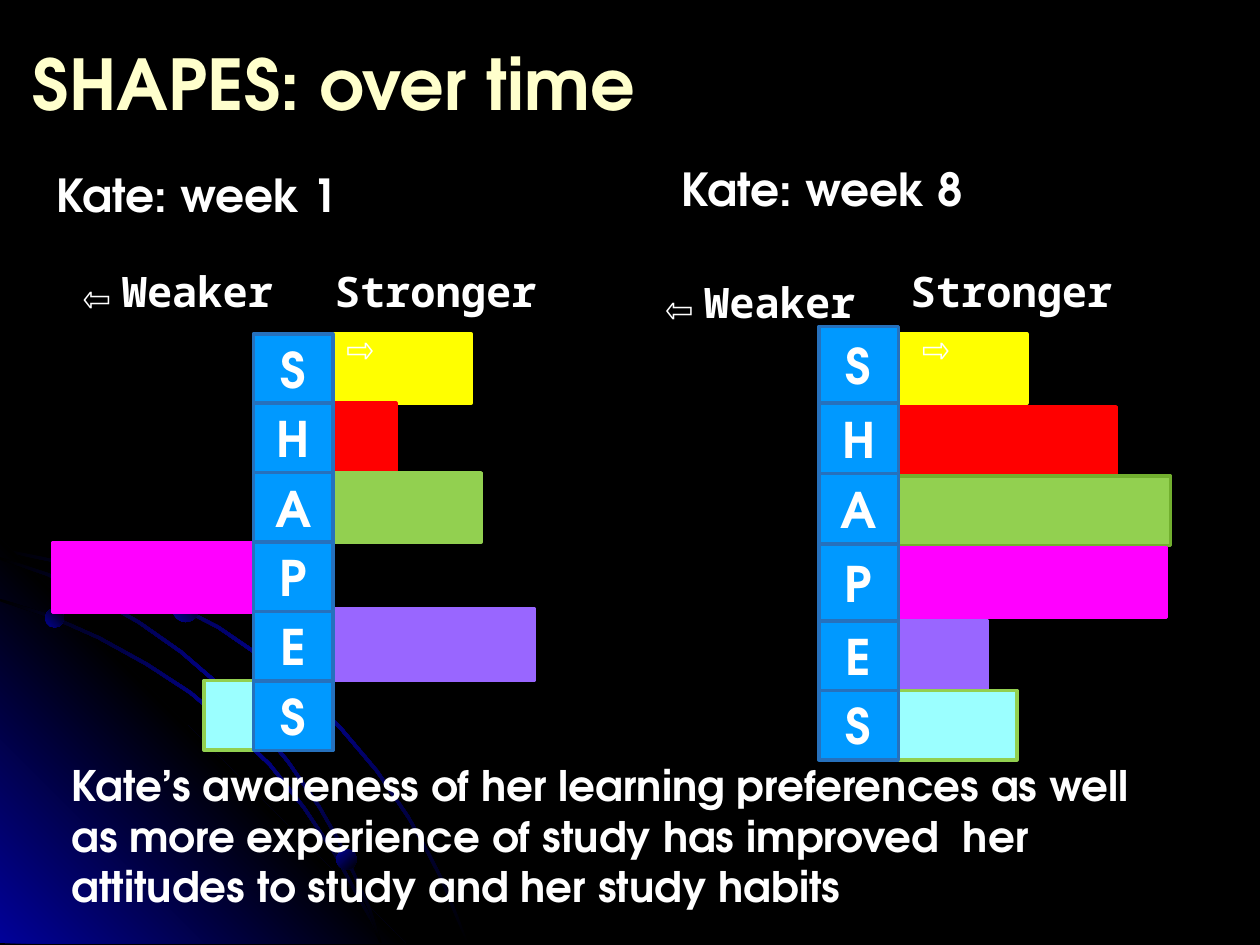
from lxml.etree import SubElement
from pptx import Presentation
from pptx.dml.color import RGBColor
from pptx.enum.shapes import MSO_SHAPE
from pptx.enum.text import MSO_ANCHOR, MSO_AUTO_SIZE, PP_ALIGN
from pptx.oxml.ns import qn
from pptx.util import Cm, Pt

HEADING_FONT, LABEL_FONT = "TeX Gyre Adventor", "Noto Sans Mono"
BLACK = RGBColor(0x00, 0x00, 0x00)
WHITE = RGBColor(0xFF, 0xFF, 0xFF)
CREAM = RGBColor(0xFF, 0xFF, 0xCC)
NAVY = RGBColor(0x01, 0x01, 0x99)
BLUE = RGBColor(0x00, 0x99, 0xFF)
BLUE_EDGE = RGBColor(0x26, 0x71, 0xBD)
YELLOW = RGBColor(0xFF, 0xFF, 0x00)
RED = RGBColor(0xFF, 0x00, 0x00)
GREEN = RGBColor(0x92, 0xD0, 0x50)
GREEN_EDGE = RGBColor(0x72, 0xAF, 0x2F)
MAGENTA = RGBColor(0xFF, 0x00, 0xFF)
PURPLE = RGBColor(0x99, 0x66, 0xFF)
AQUA = RGBColor(0x9B, 0xFF, 0xFF)

# Content; every length is in centimetres
TITLE = "SHAPES: over time"
LETTERS = "SHAPES"
LETTER_WIDTH = 1.6
BAR_FILLS = [YELLOW, RED, GREEN, MAGENTA, PURPLE, AQUA]

# Bars: top, length (negative is weaker, to the left), height
WEEKS = [
    {
        "column": 5.11, "top": 6.73, "heights": [1.4] * 6,
        "bars": [(6.73, 2.79, 1.4), (8.13, 1.27, 1.4), (9.53, 2.99, 1.4),
                 (10.95, -4.05, 1.4), (12.27, 4.06, 1.45), (13.72, -1, 1.4)],
        "edges": [YELLOW, RED, GREEN, MAGENTA, PURPLE, GREEN],
    },
    {
        "column": 16.51, "top": 6.58,
        "heights": [1.55, 1.42, 1.42, 1.55, 1.4, 1.4],
        "bars": [(6.73, 2.59, 1.4), (8.2, 4.39, 1.4), (9.6, 5.49, 1.4),
                 (11.05, 5.41, 1.4), (12.52, 1.8, 1.35), (13.92, 2.39, 1.4)],
        "edges": [YELLOW, RED, GREEN_EDGE, MAGENTA, PURPLE, GREEN],
    },
]

# Text, box, font name, size
TEXTS = [
    ("Kate: week 1", (0.89, 3.25, 8.61, 1.37), HEADING_FONT, 26),
    ("⇦Weaker", (1.19, 5.23, 5.51, 1.27), LABEL_FONT, 24),
    ("Stronger ⇨", (6.5, 5.23, 5.21, 1.27), LABEL_FONT, 24),
    ("Kate: week 8", (13.49, 3.12, 8.61, 1.37), HEADING_FONT, 26),
    ("⇦Weaker", (12.93, 5.44, 4.57, 1.27), LABEL_FONT, 24),
    ("Stronger ⇨", (18.11, 5.23, 5.59, 1.27), LABEL_FONT, 24),
    ("Kate’s awareness of her learning preferences as well as more experience "
     "of study has improved  her attitudes to study and her study habits",
     (1.19, 15.19, 22.91, 3.33), HEADING_FONT, 24),
]

# Background: upper edges of the thin arcs, the corner glow and the dots
SLIDE_FOOT = 19.02
OUTER_ARC = [(0, 11.05), (0.71, 11.2), (1.45, 11.35), (2.49, 11.66), (3.45, 12.12),
             (4.42, 12.62), (5.31, 13.23), (6.15, 13.92), (6.91, 14.68), (7.62, 15.52),
             (8.26, 16.46), (8.61, 17.09), (8.94, 17.73), (9.19, 18.36), (9.45, 19.02)]
INNER_ARC = [(0, 12.07), (1.04, 12.4), (2.01, 12.83), (2.97, 13.36), (3.86, 13.94),
             (4.67, 14.63), (5.46, 15.39), (6.15, 16.26), (6.76, 17.17), (7.26, 18.08),
             (7.52, 18.54), (7.7, 19.02)]
MIDDLE_ARC = [(0, 11.23), (0.99, 11.56), (1.93, 12.01), (2.82, 12.52), (3.66, 13.11),
              (4.45, 13.79), (5.18, 14.55), (5.82, 15.32), (6.45, 16.23), (6.83, 16.89),
              (7.16, 17.6), (7.47, 18.29), (7.7, 19.02)]
CORNER = [(8.18, SLIDE_FOOT), (0, SLIDE_FOOT), (0, 10.85)]
DOTS = [(0.91, 12.27, 0.38, 315), (6.78, 17.12, 0.41, 45), (3.48, 12.01, 0.53, 315)]


def paint_gradient(shape, colors, angle):
    """Spread the colours evenly; the angle runs clockwise."""
    shape.shadow.inherit = False
    shape.line.fill.background()
    shape.fill.gradient()
    shape.fill.gradient_angle = 360 - angle
    stops = shape._element.spPr.find(".//" + qn("a:gsLst"))
    for stop in list(stops):
        stops.remove(stop)
    for index, color in enumerate(colors):
        position = str(100000 * index // (len(colors) - 1))
        stop = SubElement(stops, qn("a:gs"), pos=position)
        SubElement(stop, qn("a:srgbClr"), val=str(color))


def add_outline(slide, points, colors, angle):
    points = [(Cm(x), Cm(y)) for x, y in points]
    builder = slide.shapes.build_freeform(*points[0])
    builder.add_line_segments(points[1:], close=True)
    paint_gradient(builder.convert_to_shape(), colors, angle)


def add_arc(slide, upper_edge):
    lower_edge = [(max(x - 0.04, 0), min(y + 0.05, SLIDE_FOOT)) for x, y in upper_edge]
    add_outline(slide, upper_edge + lower_edge[::-1], [BLACK, NAVY, BLACK], 45)


def add_box(slide, box, fill, edge):
    shape = slide.shapes.add_shape(MSO_SHAPE.RECTANGLE, *map(Cm, box))
    shape.shadow.inherit = False
    shape.fill.solid()
    shape.fill.fore_color.rgb = fill
    shape.line.color.rgb = edge
    shape.line.width = Pt(2)
    return shape


def write(shape, text, font_name, size, color=WHITE, anchor=MSO_ANCHOR.TOP,
          alignment=PP_ALIGN.LEFT):
    frame = shape.text_frame
    frame.word_wrap = True
    frame.auto_size = MSO_AUTO_SIZE.NONE
    frame.vertical_anchor = anchor
    paragraph = frame.paragraphs[0]
    paragraph.text = text
    paragraph.alignment = alignment
    font = paragraph.font
    font.name, font.size, font.bold = font_name, Pt(size), True
    font.color.rgb = color


def add_bars(slide, week):
    for (top, length, height), fill, edge in zip(week["bars"], BAR_FILLS, week["edges"]):
        left = week["column"] + (LETTER_WIDTH if length > 0 else length)
        add_box(slide, (left, top, abs(length), height), fill, edge)


def add_letters(slide, week):
    top = week["top"]
    for letter, height in zip(LETTERS, week["heights"]):
        box = (week["column"], top, LETTER_WIDTH, height)
        shape = add_box(slide, box, BLUE, BLUE_EDGE)
        write(shape, letter, HEADING_FONT, 28, WHITE, MSO_ANCHOR.MIDDLE, PP_ALIGN.CENTER)
        top += height


def main():
    presentation = Presentation()
    presentation.slide_width, presentation.slide_height = Cm(25.4), Cm(19.05)
    slide = presentation.slides.add_slide(presentation.slide_layouts[5])

    # Background
    slide.background.fill.solid()
    slide.background.fill.fore_color.rgb = BLACK
    add_arc(slide, OUTER_ARC)
    add_outline(slide, CORNER, [NAVY, BLACK, NAVY], 315)
    add_arc(slide, INNER_ARC)
    add_arc(slide, MIDDLE_ARC)
    for left, top, size, angle in DOTS:
        dot = slide.shapes.add_shape(MSO_SHAPE.OVAL, Cm(left), Cm(top), Cm(size), Cm(size))
        paint_gradient(dot, [NAVY, BLACK], angle)

    # Title
    title = slide.shapes.title
    title.left, title.top, title.width, title.height = map(Cm, (0.41, 0.69, 24.71, 1.96))
    write(title, TITLE, HEADING_FONT, 40, CREAM)

    # Bars, then the labels over them, then the letter columns
    for week in WEEKS:
        add_bars(slide, week)
    for text, box, font_name, size in TEXTS:
        write(slide.shapes.add_textbox(*map(Cm, box)), text, font_name, size)
    for week in WEEKS:
        add_letters(slide, week)

    presentation.save("out.pptx")


if __name__ == "__main__":
    main()
